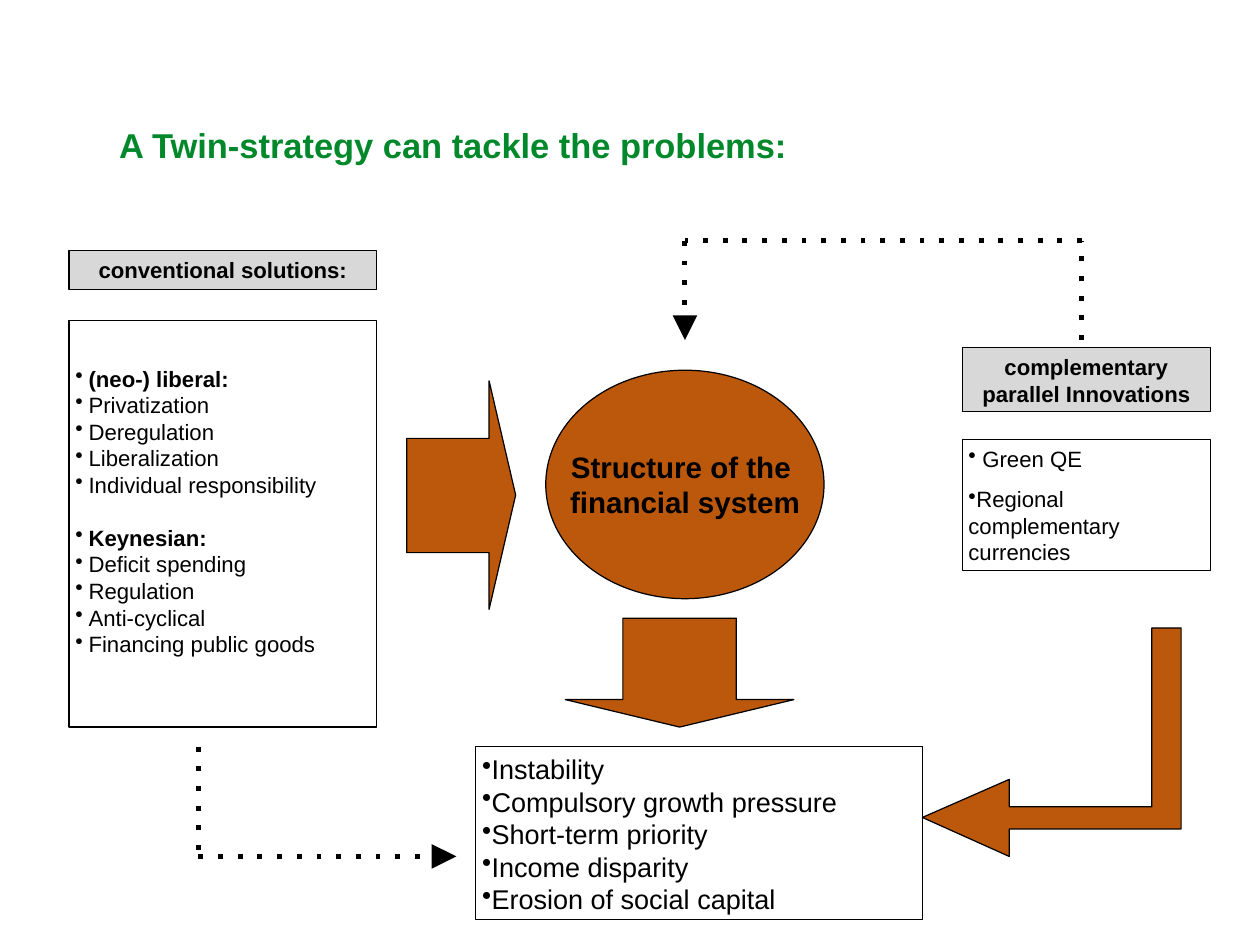
from lxml import etree
from pptx import Presentation
from pptx.dml.color import RGBColor
from pptx.enum import shapes, text
from pptx.oxml import ns
from pptx.util import Inches, Pt

BLACK = RGBColor(0x00, 0x00, 0x00)
WHITE = RGBColor(0xFF, 0xFF, 0xFF)
GRAY = RGBColor(0xD8, 0xD8, 0xD8)
ORANGE = RGBColor(0xBC, 0x58, 0x0B)
GREEN = RGBColor(0x00, 0x88, 0x2B)
INSET = 0.07


def style(shape, fill):
    shape.shadow.inherit = False
    if fill is None:
        shape.fill.background()
    else:
        shape.fill.solid()
        shape.fill.fore_color.rgb = fill
    shape.line.color.rgb = BLACK
    shape.line.width = Pt(1)


def write(shape, lines, size, bold=False, color=BLACK, bullet_indent=None,
          anchor=text.MSO_ANCHOR.TOP, inset=INSET):
    """Fill a shape with paragraphs: bulleted at bullet_indent, or centred if it is None."""
    frame = shape.text_frame
    frame.word_wrap = True
    frame.vertical_anchor = anchor
    frame.margin_left = frame.margin_right = Inches(inset)
    frame.margin_top = frame.margin_bottom = Inches(inset)
    frame.text = "\n".join(lines)
    for paragraph in frame.paragraphs:
        font = paragraph.runs[0].font
        font.name, font.size, font.bold = "Arial", Pt(size), bold
        font.color.rgb = color
        if bullet_indent is None:
            paragraph.alignment = text.PP_ALIGN.CENTER
            continue
        paragraph.alignment = text.PP_ALIGN.LEFT
        properties = paragraph._p.get_or_add_pPr()
        properties.set("marL", str(Inches(bullet_indent)))
        properties.set("indent", str(-Inches(bullet_indent)))
        etree.SubElement(properties, ns.qn("a:buChar")).set("char", "•")


presentation = Presentation()
presentation.slide_width = Inches(14.22)
presentation.slide_height = Inches(10.67)
slide = presentation.slides.add_slide(presentation.slide_layouts[6])

# Title
title = slide.shapes.add_textbox(Inches(1.33), Inches(1.4), Inches(7.56), Inches(0.47))
write(title, ["A Twin-strategy can tackle the problems:"], 28, bold=True, color=GREEN,
      anchor=text.MSO_ANCHOR.MIDDLE, inset=0)

# Financial system in the centre
ellipse = slide.shapes.add_shape(shapes.MSO_SHAPE.OVAL, Inches(6.16), Inches(4.18),
                                 Inches(3.14), Inches(2.58))
style(ellipse, ORANGE)
system_label = slide.shapes.add_textbox(Inches(6.32), Inches(5.01), Inches(2.82), Inches(0.91))
write(system_label, ["Structure of the ", "financial system"], 24, bold=True,
      anchor=text.MSO_ANCHOR.MIDDLE)

# Headings and lists: left, top, width, height, fill, lines, size, bold, bullet indent
boxes = [
    (0.78, 2.83, 3.47, 0.44, GRAY, ["conventional solutions:"], 18, True, None),
    (10.86, 3.92, 2.8, 0.73, GRAY, ["complementary parallel Innovations"], 18, True, None),
    (10.86, 4.96, 2.8, 1.48, None,
     [" Green QE", "Regional complementary currencies"], 18, False, 0),
    (5.37, 8.43, 5.04, 1.95, None,
     ["Instability", "Compulsory growth pressure", "Short-term priority",
      "Income disparity", "Erosion of social capital"], 22, False, 0),
]
for left, top, width, height, fill, lines, size, bold, indent in boxes:
    box = slide.shapes.add_shape(shapes.MSO_SHAPE.RECTANGLE, Inches(left), Inches(top),
                                 Inches(width), Inches(height))
    style(box, fill)
    write(box, lines, size, bold, bullet_indent=indent)
    if lines[0] == " Green QE":
        box.text_frame.paragraphs[1].space_before = Pt(11)

# Conventional solutions
solutions_frame = slide.shapes.add_shape(shapes.MSO_SHAPE.RECTANGLE, Inches(0.78), Inches(3.62),
                                         Inches(3.47), Inches(4.59))
style(solutions_frame, WHITE)
solutions = slide.shapes.add_textbox(Inches(0.78), Inches(4.05), Inches(3.07), Inches(3.63))
write(solutions, ["(neo-) liberal:", "Privatization", "Deregulation", "Liberalization",
                  "Individual responsibility", "Keynesian:", "Deficit spending", "Regulation",
                  "Anti-cyclical", "Financing public goods"], 18, bullet_indent=0.15)
for paragraph in solutions.text_frame.paragraphs:
    if paragraph.text.endswith(":"):
        paragraph.runs[0].font.bold = True
    if paragraph.text == "Keynesian:":
        paragraph.space_before = Pt(21.6)

# Block arrows
block_arrows = [
    [(5.52, 4.3), (5.52, 4.95), (4.59, 4.95), (4.59, 6.24), (5.52, 6.24), (5.52, 6.88),
     (5.82, 5.59)],
    [(8.96, 7.9), (8.31, 7.9), (8.31, 6.98), (7.03, 6.98), (7.03, 7.9), (6.38, 7.9),
     (7.67, 8.21)],
    [(10.41, 9.23), (11.39, 8.8), (11.39, 9.11), (13, 9.11), (13, 7.09), (13.33, 7.09),
     (13.33, 9.36), (11.39, 9.36), (11.39, 9.67)],
]
for corners in block_arrows:
    points = [(Inches(x), Inches(y)) for x, y in corners]
    builder = slide.shapes.build_freeform(*points[0])
    builder.add_line_segments(points[1:], close=True)
    style(builder.convert_to_shape(), ORANGE)

# Dotted feedback routes, each ending in an arrowhead
routes = [
    [(12.21, 3.84), (12.21, 2.72), (7.73, 2.72), (7.73, 3.84)],
    [(2.24, 8.43), (2.24, 9.67), (5.15, 9.67)],
]
for route in routes:
    for start, end in zip(route, route[1:]):
        line = slide.shapes.add_connector(
            shapes.MSO_CONNECTOR.STRAIGHT,
            *[Inches(value) for value in start + end])
        line.line.color.rgb = BLACK
        line.line.width = Pt(4)
        outline = line.line._get_or_add_ln()
        etree.SubElement(outline, ns.qn("a:prstDash")).set("val", "dot")
        if end == route[-1]:
            head = etree.SubElement(outline, ns.qn("a:tailEnd"))
            for key, value in (("type", "triangle"), ("w", "lg"), ("len", "lg")):
                head.set(key, value)
        etree.SubElement(line._element.spPr, ns.qn("a:effectLst"))

presentation.save("out.pptx")
